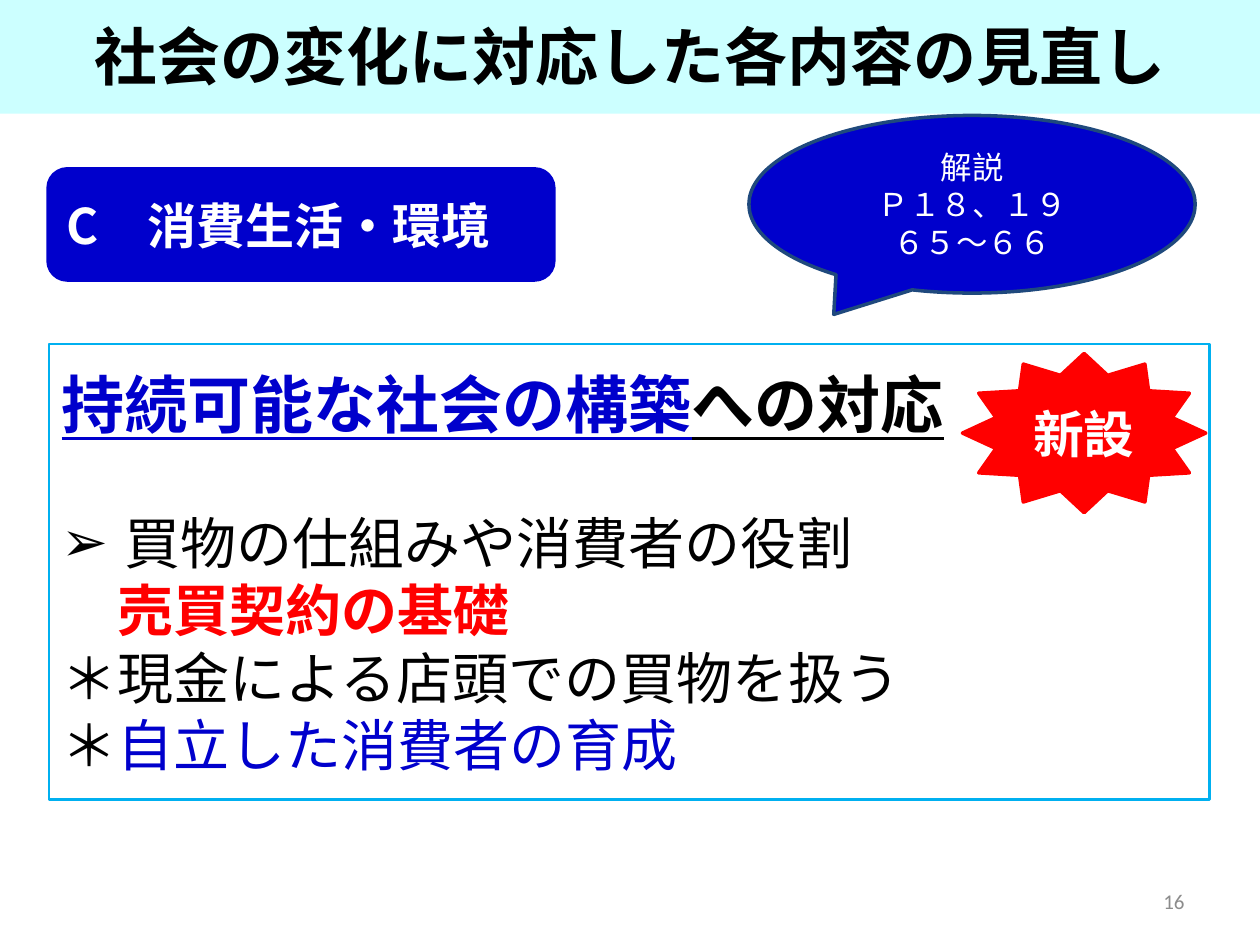
from lxml import etree
from pptx import Presentation
from pptx.dml.color import RGBColor
from pptx.enum import shapes, text
from pptx.oxml import ns
from pptx.util import Pt

BLUE = RGBColor(0x00, 0x00, 0xCC)
CYAN = RGBColor(0xCC, 0xFF, 0xFF)
SKY = RGBColor(0x00, 0xB0, 0xF0)
NAVY = RGBColor(0x1F, 0x49, 0x7D)
RED = RGBColor(0xFF, 0x00, 0x00)
BLACK = RGBColor(0x00, 0x00, 0x00)
WHITE = RGBColor(0xFF, 0xFF, 0xFF)
GRAY = RGBColor(0x8C, 0x8C, 0x8C)
FONT = "Noto Sans CJK JP"
LEAD = 1.2
LEFT, CENTER, RIGHT = (text.PP_ALIGN.LEFT, text.PP_ALIGN.CENTER,
                       text.PP_ALIGN.RIGHT)
KIND = shapes.MSO_SHAPE


def place(item, box):
    item.left, item.top, item.width, item.height = map(Pt, box)


def style(para, size, color, bold=False, align=LEFT, name=FONT):
    para.alignment = align
    para.line_spacing = Pt(size * LEAD)
    font = para.font
    font.size, font.bold, font.name = Pt(size), bold, name
    font.color.rgb = color
    base = para._p.pPr.find(ns.qn("a:defRPr"))
    etree.SubElement(base, ns.qn("a:ea")).set("typeface", name)


def indent(para, left, first=0, mark=None):
    """Set the indents in points, and the bullet or none."""
    prop = para._p.get_or_add_pPr()
    prop.set("marL", str(Pt(left)))
    prop.set("indent", str(Pt(first)))
    if mark:
        etree.SubElement(prop, ns.qn("a:buChar")).set("char", mark)
    else:
        etree.SubElement(prop, ns.qn("a:buNone"))


def center(frame):
    frame.word_wrap = True
    frame.auto_size = text.MSO_AUTO_SIZE.NONE
    frame.vertical_anchor = text.MSO_ANCHOR.MIDDLE


def banner(slide, box):
    title = slide.shapes.title
    place(title, box)
    title.fill.solid()
    title.fill.fore_color.rgb = CYAN
    title.text = "社会の変化に対応した各内容の見直し"
    center(title.text_frame)
    style(title.text_frame.paragraphs[0], 36, BLACK, True, CENTER)


def content(slide, box):
    body = slide.placeholders[1]
    place(body, box)
    body.line.color.rgb = SKY
    body.line.width = Pt(1.5)
    frame = body.text_frame
    center(frame)
    # size, left, first, bullet, space before, runs of (words, colour, bold)
    rows = [
        (36, 0, 0, None, 0, [("持続可能な社会の構築", BLUE, True),
                             ("への対応", BLACK, True)]),
        (32, 36, -36, "➢", 32 * LEAD,
         [("買物の仕組みや消費者の役割", BLACK, False)]),
        (32, 32, 0, None, 0, [("売買契約の基礎", RED, True)]),
        (32, 0, 0, None, 0, [("＊現金による店頭での買物を扱う", BLACK, False)]),
        (32, 0, 0, None, 0, [("＊", BLACK, False),
                             ("自立した消費者の育成", BLUE, False)]),
    ]
    for i, (size, left, first, mark, gap, runs) in enumerate(rows):
        para = frame.add_paragraph() if i else frame.paragraphs[0]
        indent(para, left, first, mark)
        para.space_before = Pt(gap)
        style(para, size, runs[0][1], runs[0][2])
        for words, color, bold in runs:
            run = para.add_run()
            run.text = words
            if color != runs[0][1]:
                run.font.color.rgb = color
    frame.paragraphs[0].font.underline = True


def badge(slide, kind, box, lines, size, fill, edge, width, bold=True,
          align=CENTER):
    """Add a filled shape with white text."""
    shape = slide.shapes.add_shape(kind, *map(Pt, box))
    shape.shadow.inherit = False
    shape.fill.solid()
    shape.fill.fore_color.rgb = fill
    shape.line.color.rgb = edge
    shape.line.width = Pt(width)
    center(shape.text_frame)
    shape.text_frame.text = "\n".join(lines)
    for para in shape.text_frame.paragraphs:
        style(para, size, WHITE, bold, align)
    return shape


def number(slide, box):
    frame = slide.shapes.add_textbox(*map(Pt, box)).text_frame
    center(frame)
    frame.text = "16"
    style(frame.paragraphs[0], 12, GRAY, align=RIGHT, name="Calibri")


def main():
    deck = Presentation()
    deck.slide_width, deck.slide_height = Pt(720), Pt(540)
    slide = deck.slides.add_slide(deck.slide_layouts[1])
    banner(slide, (0, -2, 720, 67))
    content(slide, (28, 196.5, 663, 260.5))
    badge(slide, KIND.ROUNDED_RECTANGLE, (28, 97, 288, 62.5),
          ["C　消費生活・環境"], 28, BLUE, BLUE, 3, align=LEFT)
    call = badge(slide, KIND.OVAL_CALLOUT, (428, 66, 255, 101.5),
                 ["解説", "Ｐ１８、１９", "６５～６６"], 18, BLUE, NAVY, 2,
                 bold=False)
    call.adjustments[0], call.adjustments[1] = -0.31, 0.62
    badge(slide, KIND.STAR_12_POINT, (550, 202, 139, 91), ["新設"], 29,
          RED, RED, 2)
    number(slide, (516, 500.5, 168, 29))
    deck.save("out.pptx")


if __name__ == "__main__":
    main()
